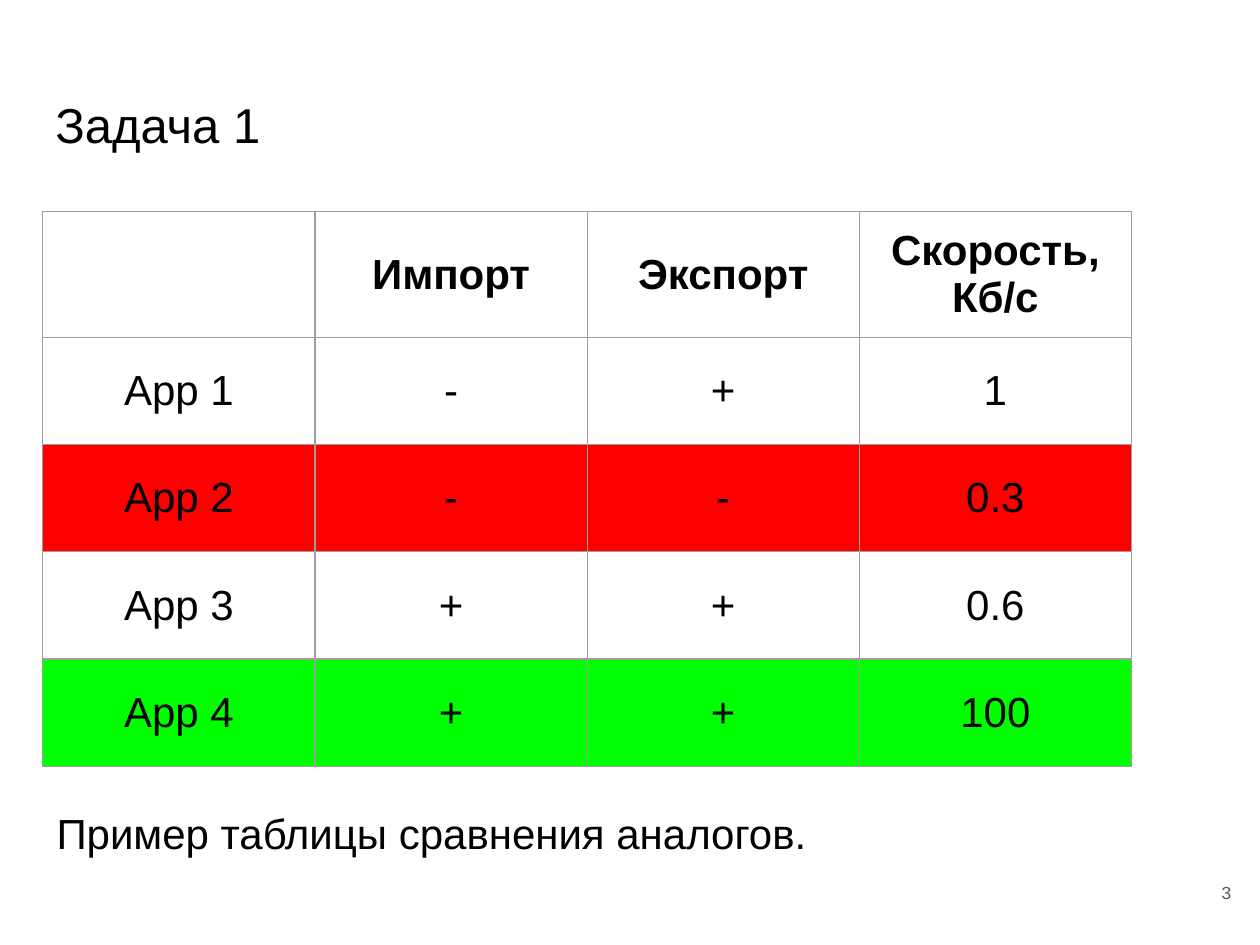
from lxml import etree
from pptx import Presentation
from pptx.dml.color import RGBColor
from pptx.enum.text import MSO_ANCHOR, PP_ALIGN
from pptx.oxml.ns import qn
from pptx.util import Inches, Pt

COLORS = {"text": "000000", "number": "595959", "border": "9E9E9E",
          "worst": "FF0000", "best": "00FF00"}
MARGINS = {f"margin_{side}": Inches(0.1) for side in ("left", "top", "right", "bottom")}


def write(tf, text, size, color="text", align=PP_ALIGN.LEFT, bold=False):
    p = tf.paragraphs[0]
    p.alignment = align
    r = p.add_run()
    r.text = text
    for name, value in {"name": "Arial", "size": Pt(size), "bold": bold}.items():
        setattr(r.font, name, value)
    r.font.color.rgb = RGBColor.from_string(COLORS[color])


def add_border(cell):
    tc_pr = cell._tc.get_or_add_tcPr()
    for i, side in enumerate(("lnL", "lnR", "lnT", "lnB")):
        ln = etree.Element(qn(f"a:{side}"), w=str(Pt(0.75)))
        fill = etree.SubElement(ln, qn("a:solidFill"))
        etree.SubElement(fill, qn("a:srgbClr"), val=COLORS["border"])
        tc_pr.insert(i, ln)


prs = Presentation()
prs.slide_width, prs.slide_height = Inches(10), Inches(7.5)
s = prs.slides.add_slide(prs.slide_layouts[6])

# Title, slide number and caption
texts = [
    ("Задача 1", (0.34, 0.65, 9.32, 0.83), MSO_ANCHOR.TOP, {"size": 28}),
    ("3", (9.27, 6.8, 0.6, 0.57), MSO_ANCHOR.MIDDLE,
     {"size": 10, "color": "number", "align": PP_ALIGN.RIGHT}),
    ("Пример таблицы сравнения аналогов.", (0.35, 6.31, 8.65, 1.13), MSO_ANCHOR.TOP,
     {"size": 24}),
]
for text, box, anchor, style in texts:
    tf = s.shapes.add_textbox(*map(Inches, box)).text_frame
    for name, value in {**MARGINS, "word_wrap": True, "vertical_anchor": anchor}.items():
        setattr(tf, name, value)
    write(tf, text, **style)

# Comparison table
rows = [
    ("", "Импорт", "Экспорт", "Скорость, Кб/с"),
    ("App 1", "-", "+", "1"),
    ("App 2", "-", "-", "0.3"),
    ("App 3", "+", "+", "0.6"),
    ("App 4", "+", "+", "100"),
]
row_fills = {2: "worst", 4: "best"}
col_width, row_height = 2.16, 0.85
table = s.shapes.add_table(
    len(rows), len(rows[0]), Inches(0.34), Inches(1.68),
    Inches(col_width * len(rows[0])), Inches(row_height * len(rows))).table
table.first_row = table.horz_banding = False

for i, values in enumerate(rows):
    for j, value in enumerate(values):
        cell = table.cell(i, j)
        for name, setting in {**MARGINS, "vertical_anchor": MSO_ANCHOR.MIDDLE}.items():
            setattr(cell, name, setting)
        if i in row_fills:
            cell.fill.solid()
            cell.fill.fore_color.rgb = RGBColor.from_string(COLORS[row_fills[i]])
        else:
            cell.fill.background()
        add_border(cell)
        if value:
            write(cell.text_frame, value, 24, align=PP_ALIGN.CENTER, bold=i == 0)

prs.save("out.pptx")
